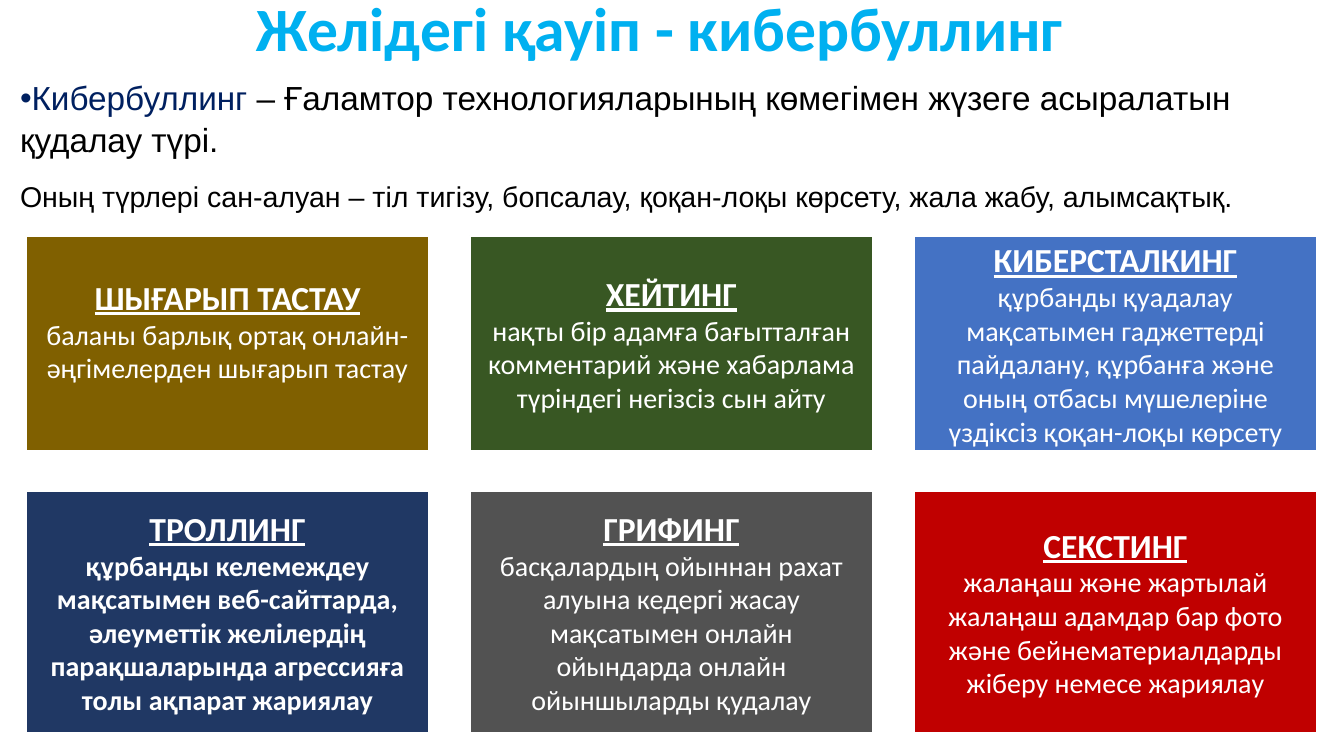
from lxml.etree import SubElement
from pptx import Presentation
from pptx.dml.color import RGBColor
from pptx.enum.shapes import MSO_SHAPE
from pptx.enum.text import MSO_ANCHOR as Anchor, PP_ALIGN as Align
from pptx.oxml.ns import qn
from pptx.util import Pt

EMU_PER_PX = 914400 / 100.8
COLORS = {
    "title": "00B0F0",
    "term": "002060",
    "text": "000000",
    "white": "FFFFFF",
    "olive": "806000",
    "green": "385723",
    "blue": "4472C4",
    "navy": "203864",
    "gray": "525252",
    "red": "C00000",
}
CARDS = [
    ("olive", "ШЫҒАРЫП ТАСТАУ",
     "баланы барлық ортақ онлайн-әңгімелерден шығарып тастау"),
    ("green", "ХЕЙТИНГ",
     "нақты бір адамға бағытталған комментарий және хабарлама "
     "түріндегі негізсіз сын айту"),
    ("blue", "КИБЕРСТАЛКИНГ",
     "құрбанды қуадалау мақсатымен гаджеттерді пайдалану, құрбанға және "
     "оның отбасы мүшелеріне үздіксіз қоқан-лоқы көрсету"),
    ("navy", "ТРОЛЛИНГ",
     "құрбанды келемеждеу мақсатымен веб-сайттарда, әлеуметтік желілердің "
     "парақшаларында агрессияға толы ақпарат жариялау"),
    ("gray", "ГРИФИНГ",
     "басқалардың ойыннан рахат алуына кедергі жасау мақсатымен онлайн "
     "ойындарда онлайн ойыншыларды қудалау"),
    ("red", "СЕКСТИНГ",
     "жалаңаш және жартылай жалаңаш адамдар бар фото және "
     "бейнематериалдарды жіберу немесе жариялау"),
]
COLUMNS = 3
COLUMN_PITCH = 444
CARD_WIDTH = 403
ROWS = [(0, 215), (255, 242)]


def px(value):
    return round(value * EMU_PER_PX)


def color(name):
    return RGBColor.from_string(COLORS[name])


def set_font(font, name, size, tint, bold=False, underline=False):
    font.name = name
    font.size = Pt(size)
    font.color.rgb = color(tint)
    font.bold = bold
    font.underline = underline


def set_frame(frame, anchor, left, top, right, bottom):
    frame.word_wrap = True
    frame.vertical_anchor = anchor
    frame.margin_left, frame.margin_top = px(left), px(top)
    frame.margin_right, frame.margin_bottom = px(right), px(bottom)


def add_title(page, left, top, width, height):
    box = page.shapes.add_textbox(px(left), px(top), px(width), px(height))
    set_frame(box.text_frame, Anchor.MIDDLE, 10, 5, 10, 5)
    para = box.text_frame.paragraphs[0]
    para.text = "Желідегі қауіп - кибербуллинг"
    para.alignment = Align.CENTER
    para.line_spacing = 0.9
    set_font(para.font, "Calibri", 44, "title", bold=True)


def add_definition(page, left, top, width, height):
    box = page.shapes.add_textbox(px(left), px(top), px(width), px(height))
    frame = box.text_frame
    set_frame(frame, Anchor.TOP, 10, 5, 10, 5)

    para = frame.paragraphs[0]
    para.line_spacing = 1.04
    for text, tint in (
        ("Кибербуллинг", "term"),
        (" – Ғаламтор технологияларының көмегімен жүзеге асыралатын қудалау түрі.", "text"),
    ):
        span = para.add_run()
        span.text = text
        set_font(span.font, "Arial", 23.8, tint)
    properties = para._p.get_or_add_pPr()
    properties.set("marL", "0")
    properties.set("indent", "-228600")
    SubElement(properties, qn("a:buFont"), typeface="Arial")
    SubElement(properties, qn("a:buChar"), char="•")

    para = frame.add_paragraph()
    para.text = (
        "Оның түрлері сан-алуан – тіл тигізу, бопсалау, қоқан-лоқы көрсету, "
        "жала жабу, алымсақтық."
    )
    para.space_before = Pt(14)
    set_font(para.font, "Arial", 20.4, "text")


def add_card(page, left, top, width, height, fill, heading, description):
    card = page.shapes.add_shape(
        MSO_SHAPE.RECTANGLE, px(left), px(top), px(width), px(height)
    )
    card.shadow.inherit = False
    card.fill.solid()
    card.fill.fore_color.rgb = color(fill)
    card.line.color.rgb = color("white")
    card.line.width = Pt(1)

    inset = 7 if fill == "navy" else 10
    bottom = 36 if fill == "olive" else inset
    frame = card.text_frame
    set_frame(frame, Anchor.MIDDLE, inset, inset, inset, bottom)
    para = frame.paragraphs[0]
    para.text = heading
    para.alignment = Align.CENTER
    set_font(para.font, "Calibri", 24, "white", bold=True, underline=True)
    para = frame.add_paragraph()
    para.text = description
    para.alignment = Align.CENTER
    set_font(para.font, "Calibri", 20, "white", bold=fill == "navy")


def add_cards(page, left, top):
    for index, card in enumerate(CARDS):
        row, column = divmod(index, COLUMNS)
        offset, height = ROWS[row]
        add_card(page, left + column * COLUMN_PITCH, top + offset,
                 CARD_WIDTH, height, *card)


def main():
    deck = Presentation()
    deck.slide_width, deck.slide_height = px(1344), px(756)
    page = deck.slides.add_slide(deck.slide_layouts[6])
    add_title(page, 197, 9, 927, 46)
    add_definition(page, 10, 71, 1334, 151)
    add_cards(page, 26, 236)
    deck.save("out.pptx")


if __name__ == "__main__":
    main()
